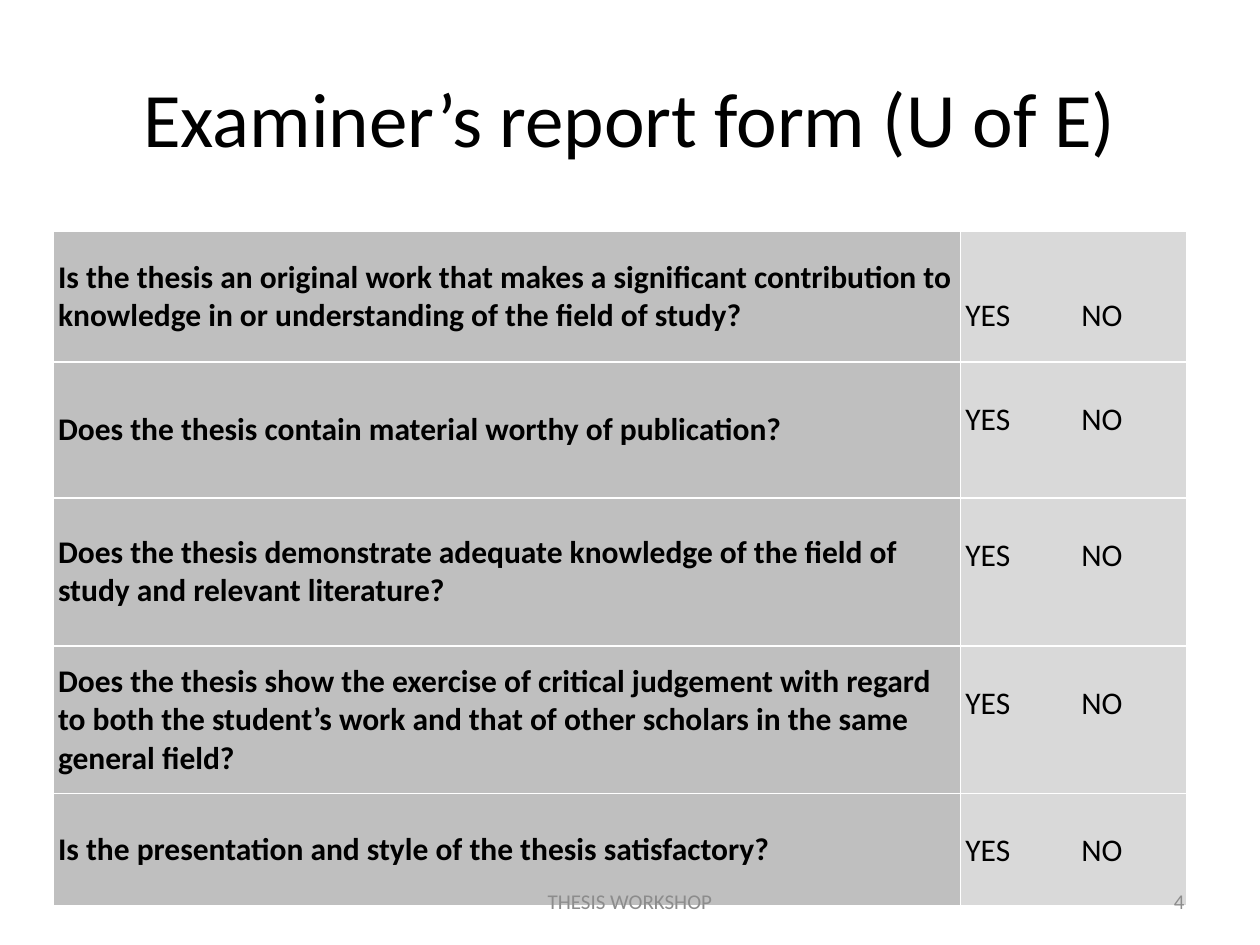
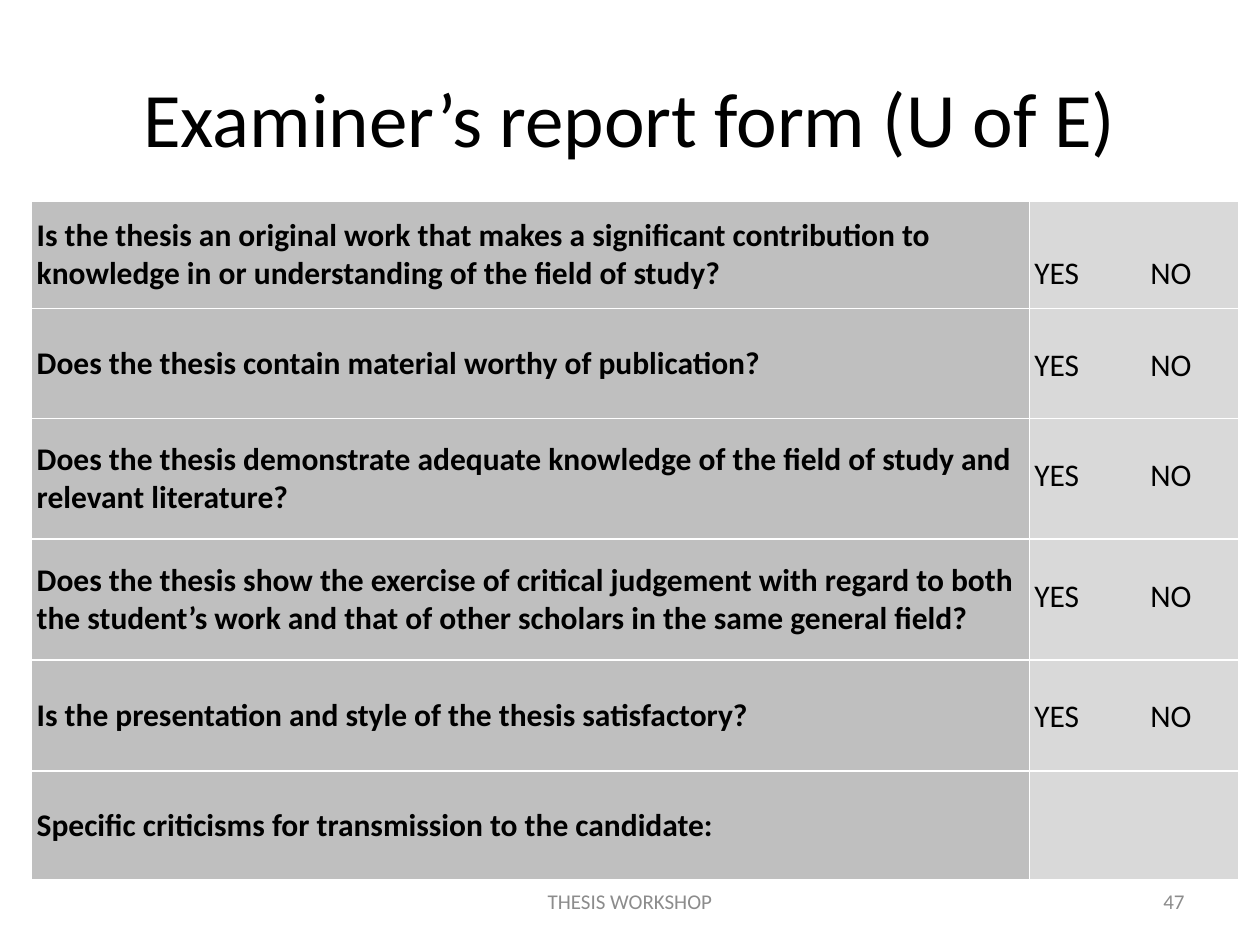
from lxml.etree import SubElement
from pptx import Presentation
from pptx.dml.color import RGBColor
from pptx.enum.text import MSO_ANCHOR, PP_ALIGN
from pptx.oxml.ns import qn
from pptx.util import Cm, Pt

# Shared look
FONT = "Calibri"
BLACK = RGBColor(0x00, 0x00, 0x00)
FOOTER_GREY = RGBColor(0x8C, 0x8C, 0x8C)
QUESTION_FILL = RGBColor(0xBF, 0xBF, 0xBF)
ANSWER_FILL = RGBColor(0xD9, 0xD9, 0xD9)
BORDER = RGBColor(0xFF, 0xFF, 0xFF)

# Shared wording
TITLE = "Examiner’s report form (U of E)"
FOOTER = "THESIS WORKSHOP"
ANSWER = "YES\tNO"
QUESTIONS = [
    "Is the thesis an original work that makes a significant contribution to "
    "knowledge in or understanding of the field of study?",
    "Does the thesis contain material worthy of publication?",
    "Does the thesis demonstrate adequate knowledge of the field of study and "
    "relevant literature?",
    "Does the thesis show the exercise of critical judgement with regard to both "
    "the student’s work and that of other scholars in the same general field?",
    "Is the presentation and style of the thesis satisfactory?",
]
CRITICISMS = "Specific criticisms for transmission to the candidate:"


def write(tf, text, size=18, color=BLACK, bold=False, align=PP_ALIGN.LEFT,
          before=0, after=0):
    p = tf.paragraphs[0]
    p.alignment = align
    p.space_before, p.space_after = Pt(before), Pt(after)
    r = p.add_run()
    r.text = text
    r.font.name, r.font.size, r.font.bold = FONT, Pt(size), bold
    r.font.color.rgb = color
    return p


def add_text(s, text, left, top, width, height, **fmt):
    tf = s.shapes.add_textbox(Cm(left), Cm(top), Cm(width), Cm(height)).text_frame
    tf.word_wrap = True
    tf.vertical_anchor = MSO_ANCHOR.MIDDLE
    write(tf, text, **fmt)


def add_tab_stop(p, position):
    tabs = SubElement(p._p.get_or_add_pPr(), qn("a:tabLst"))
    SubElement(tabs, qn("a:tab"), pos=str(Cm(position)), algn="l")


def style_cell(cell, fill, top_margin=0, anchor=MSO_ANCHOR.MIDDLE):
    cell.margin_left = cell.margin_right = Cm(0.1)
    cell.margin_top, cell.margin_bottom = Cm(top_margin), 0
    cell.vertical_anchor = anchor
    # Borders come before the fill in the cell properties
    tcPr = cell._tc.get_or_add_tcPr()
    for side in ("lnL", "lnR", "lnT", "lnB"):
        ln = SubElement(tcPr, qn(f"a:{side}"), w=str(Pt(1)))
        SubElement(SubElement(ln, qn("a:solidFill")), qn("a:srgbClr"), val=str(BORDER))
    cell.fill.solid()
    cell.fill.fore_color.rgb = fill


def add_form(s, left, top, col_widths, row_heights, rows):
    frame = s.shapes.add_table(len(rows), 2, Cm(left), Cm(top),
                               Cm(sum(col_widths)), Cm(sum(row_heights)))
    table = frame.table
    table.first_row = table.horz_banding = False
    for col, width in zip(table.columns, col_widths):
        col.width = Cm(width)
    for i, (question, answer) in enumerate(rows):
        table.rows[i].height = Cm(row_heights[i])
        left_cell, right_cell = table.cell(i, 0), table.cell(i, 1)
        style_cell(left_cell, QUESTION_FILL)
        write(left_cell.text_frame, question, bold=True, before=8, after=4)
        # Answers sit one line down; only the first row is centred vertically
        style_cell(right_cell, ANSWER_FILL, top_margin=0.77,
                   anchor=MSO_ANCHOR.TOP if i else MSO_ANCHOR.MIDDLE)
        if answer:
            add_tab_stop(write(right_cell.text_frame, answer), 2.34)


def add_form_slide(prs, number, **form):
    s = prs.slides.add_slide(prs.slide_layouts[6])
    add_text(s, TITLE, 1.27, 0.76, 22.86, 3.18, size=44, align=PP_ALIGN.CENTER)
    add_form(s, **form)
    # Footer and slide number
    add_text(s, FOOTER, 8.68, 17.66, 8.04, 1.01, size=12, color=FOOTER_GREY,
             align=PP_ALIGN.CENTER)
    add_text(s, str(number), 18.2, 17.66, 5.93, 1.01, size=12, color=FOOTER_GREY,
             align=PP_ALIGN.RIGHT)


def main():
    prs = Presentation()
    prs.slide_width, prs.slide_height = Cm(25.4), Cm(19.05)
    rows = [(question, ANSWER) for question in QUESTIONS]

    # Form with the five questions
    add_form_slide(prs, 4, left=1.07, top=4.66, col_widths=[18.29, 4.57],
                   row_heights=[2.64, 2.74, 2.98, 2.98, 2.26], rows=rows)

    # Form with room for criticisms
    add_form_slide(prs, 47, left=0.64, top=4.06, col_widths=[20.11, 4.23],
                   row_heights=[2.16, 2.22, 2.43, 2.43, 2.24, 2.19],
                   rows=rows + [(CRITICISMS, "")])
    prs.save("out.pptx")


if __name__ == "__main__":
    main()
